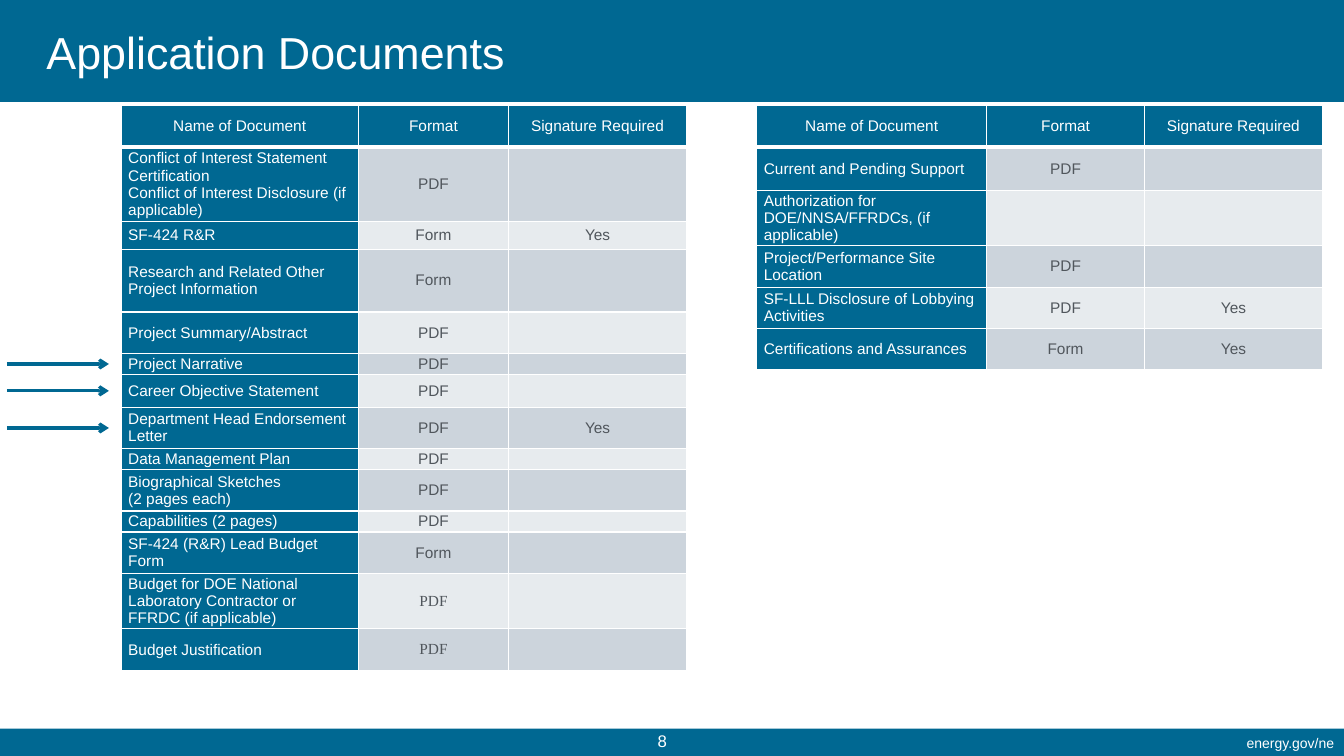
from dataclasses import dataclass
from itertools import accumulate

from lxml import etree
from pptx import Presentation
from pptx.dml.color import RGBColor
from pptx.enum.shapes import MSO_CONNECTOR, MSO_SHAPE
from pptx.enum.text import MSO_ANCHOR, MSO_AUTO_SIZE, PP_ALIGN
from pptx.oxml.ns import qn
from pptx.util import Pt

LEFT, CENTER, RIGHT = PP_ALIGN.LEFT, PP_ALIGN.CENTER, PP_ALIGN.RIGHT
MIDDLE = MSO_ANCHOR.MIDDLE
NO_FIT = MSO_AUTO_SIZE.NONE
RECT = MSO_SHAPE.RECTANGLE
STRAIGHT = MSO_CONNECTOR.STRAIGHT

# Content: (document, format, signature, row height)
TITLE = "Application Documents"
WEBSITE = "energy.gov/ne"
PAGE = "8"
HEADER = ("Name of Document", "Format", "Signature Required", 29.6)
MAIN_DOCS = [
    HEADER,
    ("Conflict of Interest Statement Certification\v"
     "Conflict of Interest Disclosure (if applicable)", "PDF", "", 52.8),
    ("SF-424 R&R", "Form", "Yes", 20),
    ("Research and Related Other Project Information", "Form", "", 44.9),
    ("Project Summary/Abstract", "PDF", "", 29.6),
    ("Project Narrative", "PDF", "", 15),
    ("Career Objective Statement", "PDF", "", 23.4),
    ("Department Head Endorsement Letter", "PDF", "Yes", 29.6),
    ("Data Management Plan", "PDF", "", 15),
    ("Biographical Sketches\v(2 pages each)", "PDF", "", 29.6),
    ("Capabilities (2 pages)", "PDF", "", 15),
    ("SF-424 (R&R) Lead Budget Form", "Form", "", 29.6),
    ("Budget for DOE National Laboratory Contractor or FFRDC (if applicable)",
     "PDF", "", 39.6),
    ("Budget Justification", "PDF", "", 29.9),
]
OTHER_DOCS = [
    HEADER,
    ("Current and Pending Support", "PDF", "", 30.7),
    ("Authorization for DOE/NNSA/FFRDCs, (if applicable)", "", "", 39.6),
    ("Project/Performance Site Location", "PDF", "", 29.6),
    ("SF-LLL Disclosure of Lobbying Activities", "PDF", "Yes", 29.6),
    ("Certifications and Assurances", "Form", "Yes", 29.6),
]
SERIF_DOCS = {MAIN_DOCS[-2][0], MAIN_DOCS[-1][0]}
ARROW_DOCS = {"Project Narrative", "Career Objective Statement",
              "Department Head Endorsement Letter"}


@dataclass(frozen=True)
class Theme:
    blue: RGBColor = RGBColor(0x00, 0x68, 0x92)
    white: RGBColor = RGBColor(0xFF, 0xFF, 0xFF)
    gray: RGBColor = RGBColor(0x50, 0x56, 0x5C)
    bands: tuple = (RGBColor(0xE7, 0xEB, 0xEE), RGBColor(0xCC, 0xD4, 0xDC))
    sans: str = "Arial"
    serif: str = "Times New Roman"
    title: float = 32
    page: float = 12
    cell: float = 11
    website: float = 10


T = Theme()
WIDTH, HEIGHT = 960, 540
TABLE_TOP = 75.6
CELL_INSET = 5

prs = Presentation()
prs.slide_width, prs.slide_height = Pt(WIDTH), Pt(HEIGHT)
s = prs.slides.add_slide(prs.slide_layouts[5])


def set_all(target, values):
    for name, value in values.items():
        setattr(target, name, value)


def write(p, text, size, color, align, font=T.sans):
    p.alignment = align
    for i, line in enumerate(text.split("\v")):
        if i:
            p.add_line_break()
        r = p.add_run()
        r.text = line
        set_all(r.font, {"name": font, "size": Pt(size), "bold": False})
        r.font.color.rgb = color


def add_bar(top, height):
    sp = s.shapes.add_shape(RECT, 0, Pt(top), Pt(WIDTH), Pt(height))
    sp.shadow.inherit = False
    sp.fill.solid()
    sp.fill.fore_color.rgb = T.blue
    sp.line.fill.background()
    s.shapes._spTree.insert(2, sp._element)  # behind the title


def add_label(text, box, size, align):
    sp = s.shapes.add_textbox(*map(Pt, box))
    tf = sp.text_frame
    set_all(tf, {"word_wrap": True, "vertical_anchor": MIDDLE, "auto_size": NO_FIT,
                 "margin_top": 0, "margin_bottom": 0})
    write(tf.paragraphs[0], text, size, T.white, align)


def add_borders(cell, bottom):
    tc_pr = cell._tc.get_or_add_tcPr()
    for i, side in enumerate("LRTB"):
        width = bottom if side == "B" else 1
        ln = etree.Element(qn(f"a:ln{side}"), w=str(Pt(width)))
        fill = etree.SubElement(ln, qn("a:solidFill"))
        etree.SubElement(fill, qn("a:srgbClr"), val=str(T.white))
        tc_pr.insert(i, ln)


def add_documents(docs, left, widths):
    heights = [doc[-1] for doc in docs]
    frame = s.shapes.add_table(len(docs), len(widths), Pt(left), Pt(TABLE_TOP),
                               Pt(sum(widths)), Pt(sum(heights)))
    table = frame.table
    for column, width in zip(table.columns, widths):
        column.width = Pt(width)
    for i, (*texts, height) in enumerate(docs):
        table.rows[i].height = Pt(height)
        for j, text in enumerate(texts):
            cell = table.cell(i, j)
            blue = i == 0 or j == 0
            cell.fill.solid()
            cell.fill.fore_color.rgb = T.blue if blue else T.bands[i % 2]
            add_borders(cell, 1 if i else 3)
            set_all(cell, {"vertical_anchor": MIDDLE, "margin_top": 0, "margin_bottom": 0,
                           "margin_left": Pt(CELL_INSET), "margin_right": Pt(CELL_INSET)})
            p = cell.text_frame.paragraphs[0]
            set_all(p, {"space_before": Pt(1), "space_after": Pt(1)})
            if text:
                font = T.serif if j and texts[0] in SERIF_DOCS else T.sans
                write(p, text, T.cell, T.white if blue else T.gray,
                      CENTER if i == 0 or j else LEFT, font)
            else:  # keeps empty cells from stretching short rows
                etree.SubElement(p._p, qn("a:endParaRPr"), sz=str(T.cell * 100))


def add_arrow(y):
    line = s.shapes.add_connector(STRAIGHT, Pt(5), Pt(y), Pt(77.8), Pt(y))
    line.line.color.rgb = T.blue
    line.line.width = Pt(2.25)
    etree.SubElement(line.line._get_or_add_ln(), qn("a:tailEnd"), type="arrow")
    etree.SubElement(line._element.spPr, qn("a:effectLst"))


# Title and bars
add_bar(0, 72.8)
add_bar(520.5, 19.5)
title = s.shapes.title
set_all(title, {"left": Pt(26), "top": Pt(6.5), "width": Pt(594.7), "height": Pt(71.3)})
set_all(title.text_frame, {"vertical_anchor": MIDDLE, "auto_size": NO_FIT, "word_wrap": True})
p = title.text_frame.paragraphs[0]
p.line_spacing = Pt(28)
write(p, TITLE, T.title, T.white, LEFT)

# Footer
add_label(WEBSITE, (575, 521, 385, 18.7), T.website, RIGHT)
add_label(PAGE, (453.6, 518.6, 38.9, 21.6), T.page, CENTER)

# Tables
add_documents(MAIN_DOCS, 86.6, (169.3, 107.5, 127))
add_documents(OTHER_DOCS, 540.6, (164.2, 112.8, 127))

# Arrows at the middle of the marked rows
bottoms = accumulate(doc[-1] for doc in MAIN_DOCS)
for doc, bottom in zip(MAIN_DOCS, bottoms):
    if doc[0] in ARROW_DOCS:
        add_arrow(TABLE_TOP + bottom - doc[-1] / 2)

prs.save("out.pptx")
